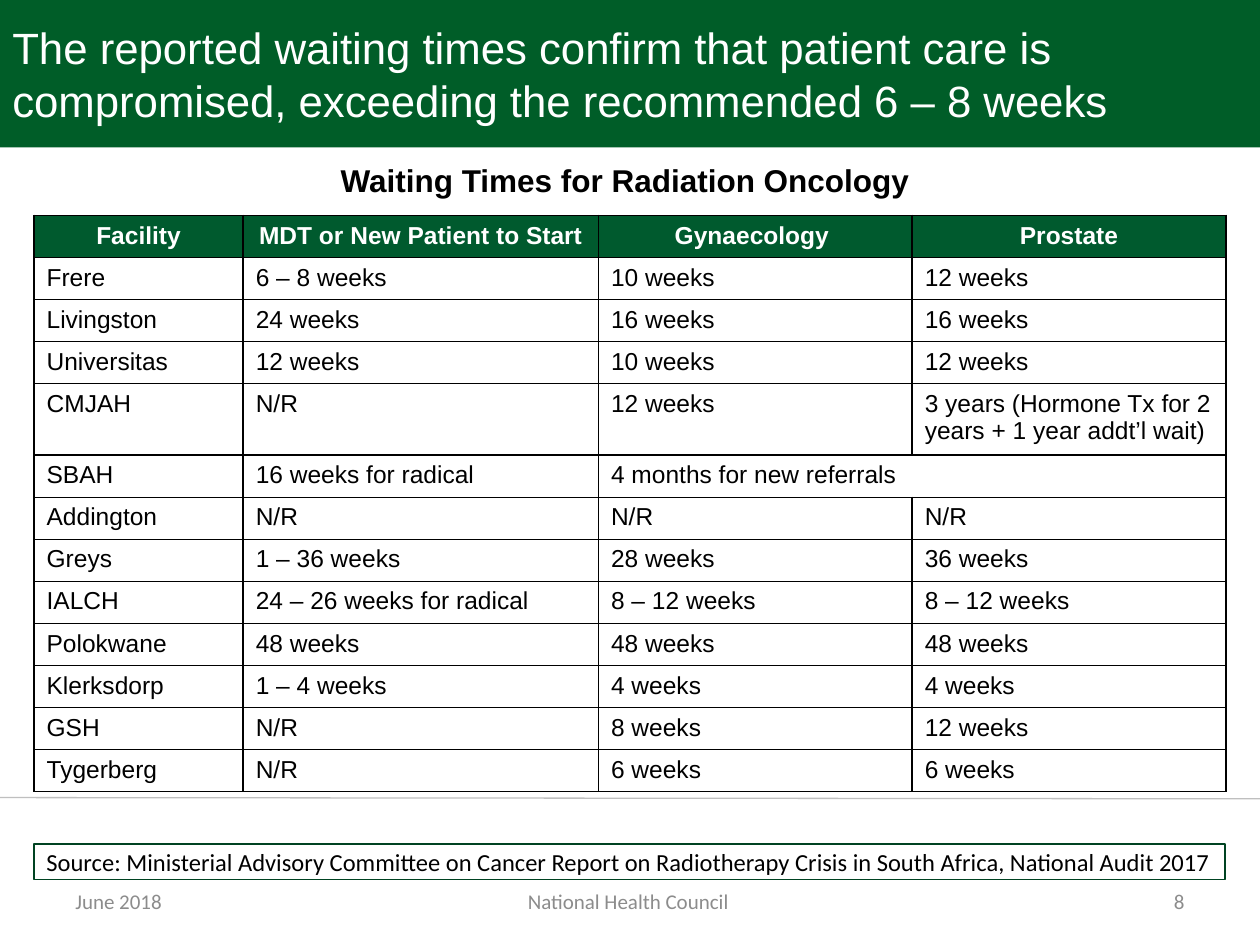
"""Build the radiation oncology waiting times slide."""
from lxml import etree
from pptx import Presentation
from pptx import util as u
from pptx.dml.color import RGBColor
from pptx.enum import shapes, text
from pptx.oxml import ns

TITLE_GREEN = RGBColor(0x00, 0x5D, 0x28)
HEADER_GREEN = RGBColor(0x00, 0x5A, 0x2E)
OUTLINE_GREEN = RGBColor(0x00, 0x43, 0x22)
WHITE = RGBColor(0xFF, 0xFF, 0xFF)
BLACK = RGBColor(0x00, 0x00, 0x00)
FOOTER_GREY = RGBColor(0x8C, 0x8C, 0x8C)
RULE_GREY = RGBColor(0xBF, 0xBF, 0xBF)

LEFT, CENTER, RIGHT = text.PP_ALIGN.LEFT, text.PP_ALIGN.CENTER, text.PP_ALIGN.RIGHT
MARGIN, CONTENT_WIDTH = 0.27, 9.45
COLUMN_WIDTHS = [1.66, 2.82, 2.49, 2.49]
ROW_HEIGHT, TALL_ROW_HEIGHT = 0.32, 0.54
TALL_ROW, MERGED_ROW = 4, 5

WAITING_TIMES = [
    ["Facility", "MDT or New Patient to Start", "Gynaecology ", "Prostate"],
    ["Frere", "6 – 8 weeks", "10 weeks", "12 weeks"],
    ["Livingston", "24 weeks", "16 weeks", "16 weeks"],
    ["Universitas", "12 weeks", "10 weeks", "12 weeks"],
    ["CMJAH", "N/R", "12 weeks", "3 years (Hormone Tx for 2 years + 1 year addt’l wait)"],
    ["SBAH", "16 weeks for radical", "4 months for new referrals"],
    ["Addington", "N/R", "N/R", "N/R"],
    ["Greys", "1 – 36 weeks", "28 weeks", "36 weeks"],
    ["IALCH", "24 – 26 weeks for radical", "8 – 12 weeks", "8 – 12 weeks"],
    ["Polokwane", "48 weeks", "48 weeks", "48 weeks"],
    ["Klerksdorp", "1 – 4 weeks", "4 weeks", "4 weeks"],
    ["GSH", "N/R", "8 weeks", "12 weeks"],
    ["Tygerberg", "N/R", "6 weeks", "6 weeks"],
]
FOOTERS = [
    ("June 2018", 0.5, 2.33, LEFT),
    ("National Health Council ", 3.42, 3.17, CENTER),
    ("8", 7.17, 2.33, RIGHT),
]


def write_text(frame, words, size=14, font="Arial", color=BLACK, bold=False, align=LEFT):
    """Write one formatted paragraph into a text frame."""
    para = frame.paragraphs[0]
    para.alignment = align
    span = para.add_run()
    span.text = words
    span.font.size = u.Pt(size)
    span.font.name = font
    span.font.bold = bold
    span.font.color.rgb = color


def add_text_box(slide, words, left, top, width, height,
                 anchor=text.MSO_ANCHOR.MIDDLE, **style):
    """Add a wrapping text box."""
    box = slide.shapes.add_textbox(*map(u.Inches, (left, top, width, height)))
    box.text_frame.word_wrap = True
    box.text_frame.vertical_anchor = anchor
    write_text(box.text_frame, words, **style)


def add_panel(slide, words, left, top, width, height, fill, outline=None, **style):
    """Add a filled rectangle holding text, outlined on request."""
    panel = slide.shapes.add_shape(shapes.MSO_SHAPE.RECTANGLE,
                                   *map(u.Inches, (left, top, width, height)))
    panel.shadow.inherit = False
    panel.fill.solid()
    panel.fill.fore_color.rgb = fill
    if outline is None:
        panel.line.fill.background()
    else:
        panel.line.color.rgb = outline
        panel.line.width = u.Pt(1)
    panel.text_frame.word_wrap = True
    panel.text_frame.vertical_anchor = text.MSO_ANCHOR.MIDDLE
    write_text(panel.text_frame, words, **style)


def add_rule(slide, start_x, start_y, end_x, end_y):
    """Add the thin grey line above the footer."""
    rule = slide.shapes.add_connector(shapes.MSO_CONNECTOR.STRAIGHT,
                                      *map(u.Inches, (start_x, start_y, end_x, end_y)))
    rule.line.color.rgb = RULE_GREY
    rule.line.width = u.Pt(0.75)
    etree.SubElement(rule._element.spPr, ns.qn("a:effectLst"))


def style_cell(cell, fill):
    """Give a cell one-point black borders and a solid fill."""
    properties = cell._tc.get_or_add_tcPr()
    for side in ("lnL", "lnR", "lnT", "lnB"):
        border = etree.SubElement(properties, ns.qn(f"a:{side}"), w=str(u.Pt(1)))
        paint = etree.SubElement(border, ns.qn("a:solidFill"))
        etree.SubElement(paint, ns.qn("a:srgbClr"), val=str(BLACK))
    cell.fill.solid()
    cell.fill.fore_color.rgb = fill


def add_waiting_table(slide, left, top):
    """Add the table of waiting times by facility."""
    row_count = len(WAITING_TIMES)
    height = ROW_HEIGHT * (row_count - 1) + TALL_ROW_HEIGHT
    frame = slide.shapes.add_table(row_count, len(COLUMN_WIDTHS),
                                   *map(u.Inches, (left, top, CONTENT_WIDTH, height)))
    table = frame.table
    for column, width in zip(table.columns, COLUMN_WIDTHS):
        column.width = u.Inches(width)
    for index, row in enumerate(table.rows):
        row.height = u.Inches(TALL_ROW_HEIGHT if index == TALL_ROW else ROW_HEIGHT)
        header = index == 0
        for cell in row.cells:
            style_cell(cell, HEADER_GREEN if header else WHITE)
        for cell, words in zip(row.cells, WAITING_TIMES[index]):
            write_text(cell.text_frame, words, bold=header,
                       color=WHITE if header else BLACK,
                       align=CENTER if header else LEFT)
    table.cell(MERGED_ROW, 2).merge(table.cell(MERGED_ROW, 3))


def main():
    """Build and save the slide."""
    deck = Presentation()
    deck.slide_width, deck.slide_height = u.Inches(10), u.Inches(7.5)
    slide = deck.slides.add_slide(deck.slide_layouts[6])
    add_rule(slide, 0, 6.33, 10, 6.34)
    add_panel(slide, "The reported waiting times confirm that patient care is "
              "compromised, exceeding the recommended 6 – 8 weeks",
              0, 0, 10, 1.17, TITLE_GREEN, size=25, color=WHITE)
    for words, left, width, align in FOOTERS:
        add_text_box(slide, words, left, 6.95, width, 0.4, size=12,
                     font="Calibri", color=FOOTER_GREY, align=align)
    add_waiting_table(slide, MARGIN, 1.71)
    add_text_box(slide, "Waiting Times for Radiation Oncology ",
                 MARGIN, 1.23, CONTENT_WIDTH, 0.4, anchor=text.MSO_ANCHOR.TOP,
                 size=18, bold=True, align=CENTER)
    add_panel(slide, "Source: Ministerial Advisory Committee on Cancer Report on "
              "Radiotherapy Crisis in South Africa, National Audit 2017",
              MARGIN, 6.7, CONTENT_WIDTH, 0.28, WHITE, outline=OUTLINE_GREEN,
              font="Calibri")
    deck.save("out.pptx")


if __name__ == "__main__":
    main()
